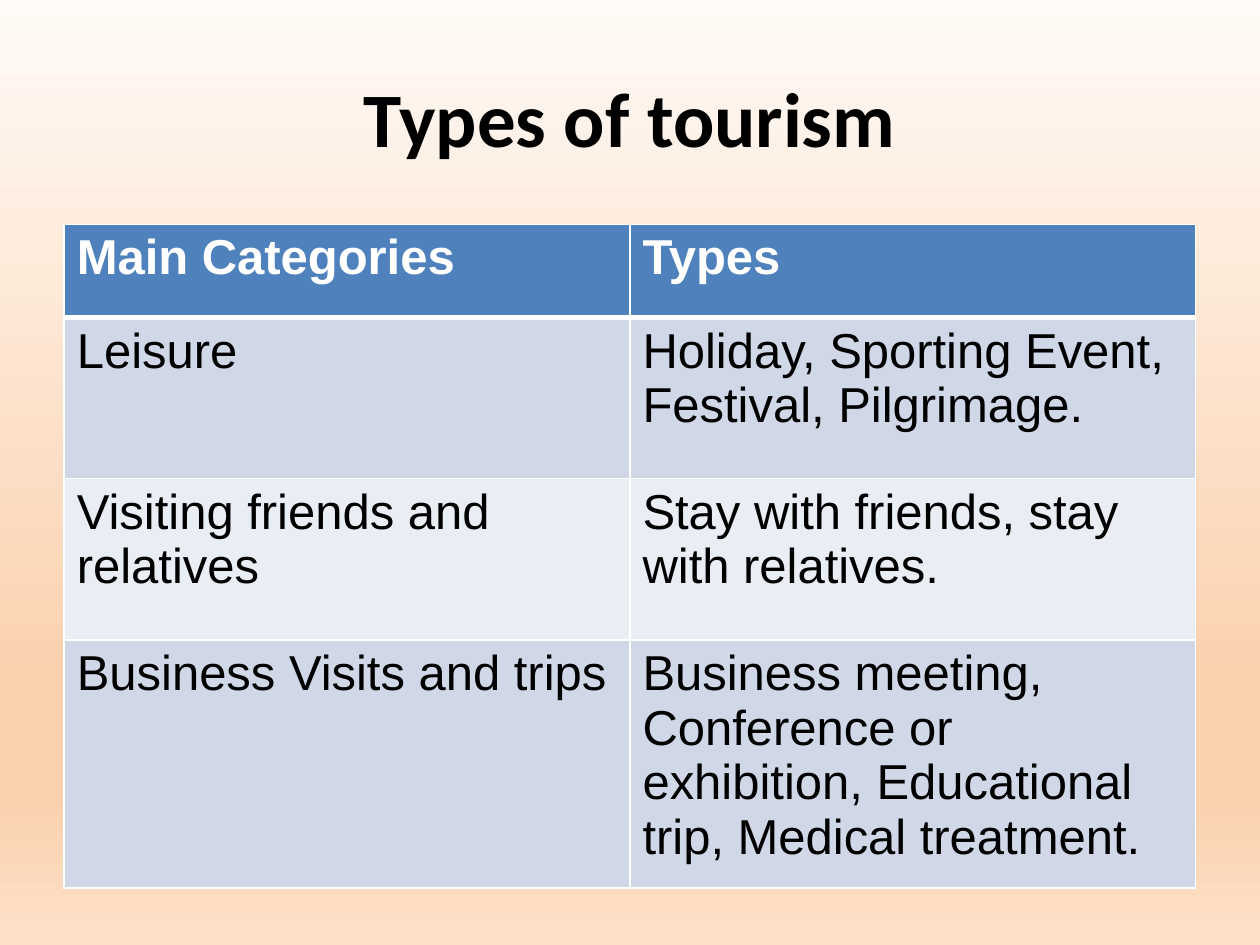
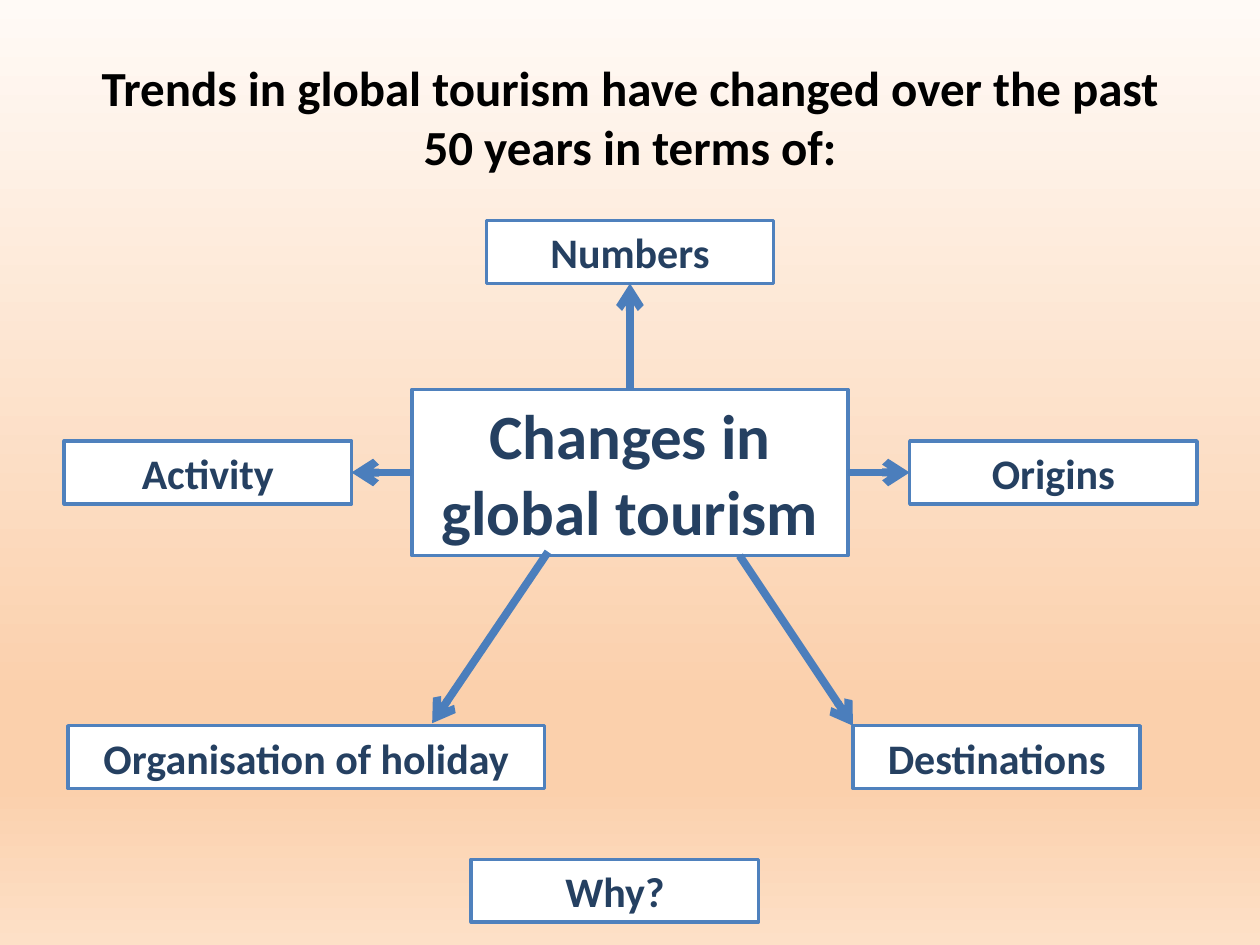
import copy

import lxml.etree
import pptx
import pptx.dml.color
import pptx.enum.shapes
import pptx.enum.text
import pptx.oxml.ns
import pptx.util

Inches = pptx.util.Inches
Pt = pptx.util.Pt
RGBColor = pptx.dml.color.RGBColor
qn = pptx.oxml.ns.qn

BLACK = RGBColor(0x00, 0x00, 0x00)
WHITE = RGBColor(0xFF, 0xFF, 0xFF)
BLUE = RGBColor(0x4F, 0x81, 0xBD)
ARROW_BLUE = RGBColor(0x4B, 0x7E, 0xBC)
NAVY = RGBColor(0x25, 0x40, 0x61)
BAND_DARK = RGBColor(0xD0, 0xD8, 0xE8)
BAND_LIGHT = RGBColor(0xE9, 0xED, 0xF4)
BACKGROUND_STOPS = (
    (0, RGBColor(0xFF, 0xFA, 0xF6)),
    (0.74, RGBColor(0xFB, 0xD0, 0xAC)),
    (0.83, RGBColor(0xFB, 0xD0, 0xAC)),
    (1, RGBColor(0xFD, 0xE0, 0xC7)),
)

TITLE_BOX = (0.5, 0.3, 9, 1.25)
TABLE_BOX = (0.51, 1.78, 8.98, 5.27)
HUB_BOX = (3.27, 3.09, 3.46, 1.32)
TOPIC_WIDTH, TOPIC_HEIGHT = 2.28, 0.5

ROW_HEIGHTS = (0.74, 1.28, 1.28, 1.97)
TOURISM_TYPES = (
    ("Main Categories", "Types"),
    ("Leisure", "Holiday, Sporting Event, Festival, Pilgrimage."),
    ("Visiting friends and relatives", "Stay with friends, stay with relatives."),
    ("Business Visits and trips",
     "Business meeting, Conference or exhibition, Educational trip, Medical treatment."),
)


def paint_background(master):
    """Give every slide the same vertical peach gradient."""
    fill = master.background.fill
    fill.gradient()
    fill.gradient_angle = 270
    stop_list = master.element.find(".//" + qn("p:bg")).find(".//" + qn("a:gsLst"))
    while len(stop_list) < len(BACKGROUND_STOPS):
        stop_list.append(copy.deepcopy(stop_list[0]))
    for stop, (position, color) in zip(fill.gradient_stops, BACKGROUND_STOPS):
        stop.position = position
        stop.color.rgb = color


def write(frame, text, size, color, bold=True, font="Calibri", align=None):
    """Put one formatted paragraph into a text frame."""
    frame.word_wrap = True
    paragraph = frame.paragraphs[0]
    paragraph.text = text
    paragraph.alignment = align
    style = paragraph.runs[0].font
    style.name, style.size, style.bold = font, Pt(size), bold
    style.color.rgb = color


def add_title(slide, text, size):
    """Add the centred title."""
    frame = slide.shapes.add_textbox(*map(Inches, TITLE_BOX)).text_frame
    write(frame, text, size, BLACK, align=pptx.enum.text.PP_ALIGN.CENTER)
    frame.vertical_anchor = pptx.enum.text.MSO_ANCHOR.MIDDLE


def add_borders(cell, top, bottom):
    """Draw white cell borders, with the given top and bottom widths."""
    properties = cell._tc.get_or_add_tcPr()
    for side, width in (("L", 1), ("R", 1), ("T", top), ("B", bottom)):
        line = lxml.etree.SubElement(properties, qn("a:ln" + side), w=str(Pt(width)))
        solid = lxml.etree.SubElement(line, qn("a:solidFill"))
        lxml.etree.SubElement(solid, qn("a:srgbClr"), val=str(WHITE))


def add_types_table(slide, box):
    """Add the table of tourism categories and their types."""
    table = slide.shapes.add_table(
        len(TOURISM_TYPES), len(TOURISM_TYPES[0]), *map(Inches, box)).table
    for column in table.columns:
        column.width = Inches(box[2] / len(table.columns))
    for row, texts in enumerate(TOURISM_TYPES):
        table.rows[row].height = Inches(ROW_HEIGHTS[row])
        header = row == 0
        band = BLUE if header else BAND_DARK if row % 2 else BAND_LIGHT
        for cell, text in zip(table.rows[row].cells, texts):
            add_borders(cell, 3 if row == 1 else 1, 3 if header else 1)
            cell.fill.solid()
            cell.fill.fore_color.rgb = band
            write(cell.text_frame, text, 28, WHITE if header else BLACK, header, "Arial")


def add_topic(slide, text, left, top, width=TOPIC_WIDTH, height=TOPIC_HEIGHT, size=24):
    """Add a white outlined box with a centred label."""
    topic = slide.shapes.add_shape(
        pptx.enum.shapes.MSO_SHAPE.RECTANGLE, *map(Inches, (left, top, width, height)))
    topic.shadow.inherit = False
    topic.fill.solid()
    topic.fill.fore_color.rgb = WHITE
    topic.line.color.rgb = BLUE
    topic.line.width = Pt(2)
    write(topic.text_frame, text, size, NAVY, align=pptx.enum.text.PP_ALIGN.CENTER)
    topic.text_frame.auto_size = pptx.enum.text.MSO_AUTO_SIZE.SHAPE_TO_FIT_TEXT
    return topic


def add_arrow(slide, start=(0, 0), end=(0, 0)):
    """Add a thick arrow between two points."""
    arrow = slide.shapes.add_connector(
        pptx.enum.shapes.MSO_CONNECTOR.STRAIGHT, *map(Inches, (*start, *end)))
    arrow.line.color.rgb = ARROW_BLUE
    arrow.line.width = Pt(4.5)
    lxml.etree.SubElement(arrow.line._get_or_add_ln(), qn("a:tailEnd"), type="arrow")
    lxml.etree.SubElement(arrow._element.spPr, qn("a:effectLst"))
    return arrow


def add_changes_diagram(slide, box):
    """Add the hub, the topics around it and the arrows to them."""
    left, top, width, height = box
    centre = left + width / 2
    bottom = top + height
    side_top = top + (height - TOPIC_HEIGHT) / 2
    lower_top = bottom + 1.35

    hub = add_topic(slide, "Changes in global tourism", *box, size=36)
    numbers = add_topic(slide, "Numbers", centre - TOPIC_WIDTH / 2, top - 1.34)
    origins = add_topic(slide, "Origins", left + width + 0.49, side_top)
    add_topic(slide, "Destinations", left + 3.5, lower_top)
    add_topic(slide, "Organisation of holiday", left - 2.73, lower_top, 3.78)
    activity = add_topic(slide, "Activity", left - 0.48 - TOPIC_WIDTH, side_top)

    for topic, hub_side, topic_side in (
            (numbers, 0, 2), (origins, 3, 1), (activity, 1, 3)):
        arrow = add_arrow(slide)
        arrow.begin_connect(hub, hub_side)
        arrow.end_connect(topic, topic_side)
    add_arrow(slide, (left + 2.6, bottom), (left + 3.5, lower_top))
    add_arrow(slide, (left + 1.08, bottom - 0.03), (left + 0.16, lower_top - 0.02))
    add_topic(slide, "Why?", left + 0.47, bottom + 2.41)


def build_types_slide(slide):
    """Build the slide on types of tourism."""
    add_title(slide, "Types of tourism", 44)
    add_types_table(slide, TABLE_BOX)


def build_trends_slide(slide):
    """Build the slide on changes in global tourism."""
    add_title(
        slide, "Trends in global tourism have changed over the past 50 years in terms of:", 28)
    add_changes_diagram(slide, HUB_BOX)


def main():
    """Build and save the presentation."""
    deck = pptx.Presentation()
    deck.slide_width, deck.slide_height = Inches(10), Inches(7.5)
    paint_background(deck.slide_master)
    for build in (build_types_slide, build_trends_slide):
        build(deck.slides.add_slide(deck.slide_layouts[6]))
    deck.save("out.pptx")


if __name__ == "__main__":
    main()
